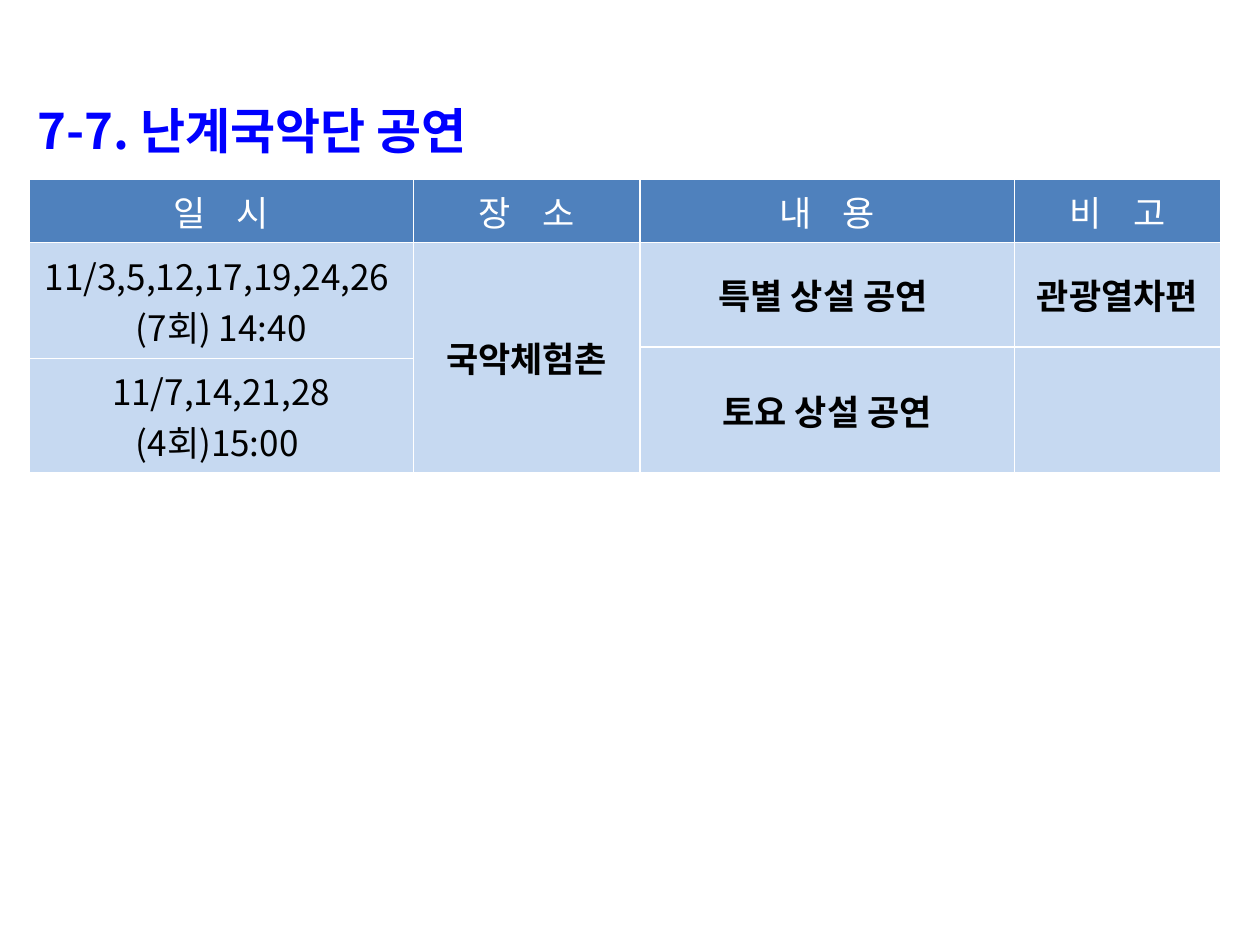
from lxml import etree
from pptx import Presentation
from pptx.dml.color import RGBColor
from pptx.enum.text import MSO_ANCHOR, PP_ALIGN
from pptx.oxml.ns import qn
from pptx.util import Inches, Pt

CENTER = PP_ALIGN.CENTER
MIDDLE, BOTTOM = MSO_ANCHOR.MIDDLE, MSO_ANCHOR.BOTTOM
FONT = "Noto Sans CJK KR"
COLORS = {"title": "0000FF", "header": "4F81BD", "body": "C6D9F1",
          "white": "FFFFFF", "black": "000000"}


def style(p, size, color, bold):
    p.font.size = Pt(size)
    p.font.bold = bold
    p.font.color.rgb = RGBColor.from_string(COLORS[color])
    p.font.name = FONT
    props = p._p.pPr.find(qn("a:defRPr"))
    etree.SubElement(props, qn("a:ea")).set("typeface", FONT)


prs = Presentation()
prs.slide_width, prs.slide_height = Inches(10), Inches(7.5)
s = prs.slides.add_slide(prs.slide_layouts[6])

widths = [3.05, 1.8, 2.97, 1.64]
heights = [0.42, 0.83, 0.09, 0.74]
headers = ["일 시", "장 소", "내 용", "비 고"]
merges = [(1, 0, 2, 0), (1, 1, 3, 1), (2, 2, 3, 2), (2, 3, 3, 3)]
entries = [
    (1, 0, ["11/3,5,12,17,19,24,26 ", "(7회) 14:40"], False),
    (1, 1, ["국악체험촌"], True),
    (1, 2, ["특별 상설 공연 "], True),
    (1, 3, ["관광열차편"], True),
    (2, 2, ["토요 상설 공연"], True),
    (3, 0, ["11/7,14,21,28", "(4회)15:00 "], False),
]

table = s.shapes.add_table(len(heights), len(widths), Inches(0.23), Inches(1.42),
                           Inches(sum(widths)), Inches(sum(heights))).table
table.horz_banding = False
for col, width in zip(table.columns, widths):
    col.width = Inches(width)
for row, height in zip(table.rows, heights):
    row.height = Inches(height)
for i in range(len(heights)):
    for j in range(len(widths)):
        cell = table.cell(i, j)
        cell.vertical_anchor = MIDDLE
        cell.fill.solid()
        cell.fill.fore_color.rgb = RGBColor.from_string(COLORS["body" if i else "header"])
for top, left, bottom, right in merges:
    table.cell(top, left).merge(table.cell(bottom, right))

for j, text in enumerate(headers):
    p = table.cell(0, j).text_frame.paragraphs[0]
    p.alignment = CENTER
    for char in text:
        r = p.add_run()
        r.text = char
        if char == " ":
            r._r.get_or_add_rPr().set("spc", "1350")
    style(p, 20, "white", False)

for i, j, lines, bold in entries:
    tf = table.cell(i, j).text_frame
    tf.text = "\n".join(lines)
    for p in tf.paragraphs:
        p.alignment = CENTER
        style(p, 20, "black", bold)

sp = s.shapes.add_textbox(Inches(0.2), Inches(0.47), Inches(9.61), Inches(0.84))
tf = sp.text_frame
tf.word_wrap = True
tf.vertical_anchor = BOTTOM
p = tf.paragraphs[0]
p.text = "7-7. 난계국악단 공연"
style(p, 28, "title", True)

prs.save("out.pptx")
